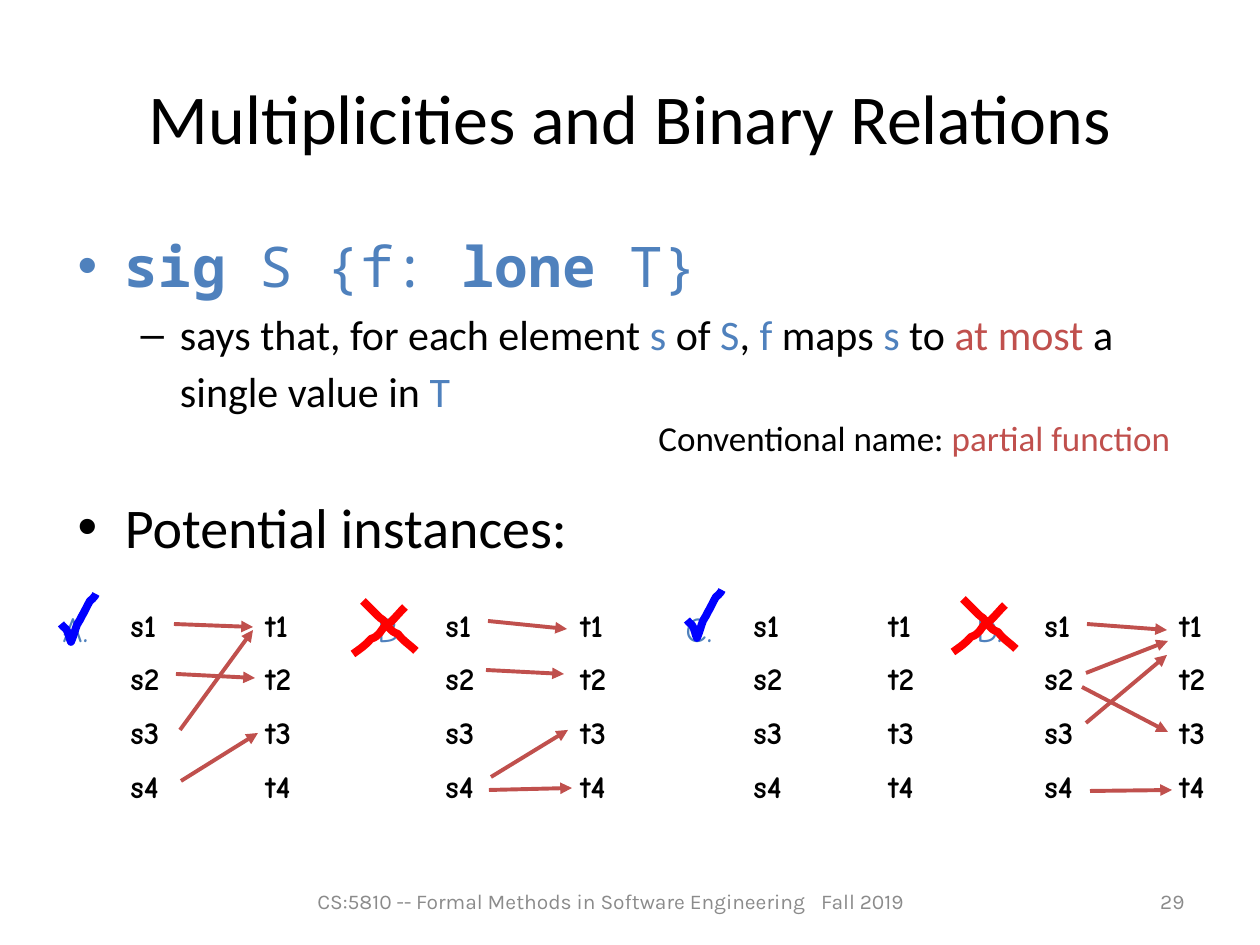
from lxml import etree
from pptx import Presentation
from pptx import util as u
from pptx.dml.color import RGBColor
from pptx.enum import shapes, text
from pptx.oxml.ns import qn

BLACK = RGBColor(0, 0, 0)
BLUE = RGBColor(0x4F, 0x81, 0xBD)
RED = RGBColor(0xC0, 0x50, 0x4D)
GREY = RGBColor(0x8B, 0x8B, 0x8B)
TICK_BLUE = RGBColor(0, 0, 0xFF)
CROSS_RED = RGBColor(0xFF, 0, 0)

TITLE = "Multiplicities and Binary Relations"
SIGNATURE = [("sig", True), (" S {f: ", False), ("lone", True), (" T}", False)]
MEANING = [
    ("says that, for each element ", BLACK), ("s", BLUE), (" of ", BLACK),
    ("S", BLUE), (", ", BLACK), ("f", BLUE), (" maps ", BLACK), ("s", BLUE),
    (" to ", BLACK), ("at most ", RED), ("a single value in ", BLACK),
    ("T", BLUE), (" ", BLACK),
]
INSTANCES = "Potential instances:"
CONVENTION = [("Conventional name: ", BLACK), ("partial function", RED)]
FOOTER = [("CS:5810 -- Formal Methods in Software Engineering", GREY),
          (" ", GREY), ("Fall 2019", GREY)]
PAGE_NUMBER = [("29", GREY)]

DIAGRAMS = [
    ("C.", 741, []),
    ("A.", 118, [(176, 674, 255, 678), (180, 730, 253, 630),
                 (181, 781, 258, 733), (174, 624, 253, 627)]),
    ("B.", 433, [(486, 670, 564, 674), (488, 621, 567, 629),
                 (491, 777, 568, 730), (489, 790, 572, 788)]),
    ("D.", 1032, [(1086, 673, 1168, 641), (1087, 624, 1167, 630),
                  (1082, 687, 1168, 732), (1090, 791, 1172, 790),
                  (1086, 723, 1167, 655)]),
]
ROWS = 4
ROW_TOP, ROW_SPAN = 600, 161
TARGET_SHIFT, LETTER_SHIFT = 135, -68

FALLING = [(0, 0), (5, 5), (10, 10), (15, 15), (16, 16), (18, 18), (20, 19),
           (26, 25), (26, 30), (35, 33), (40, 40), (47, 44), (53, 50)]
RISING = [(42, 6), (37, 11), (33, 16), (28, 21), (27, 22), (24, 22), (23, 24),
          (17, 30), (17, 35), (8, 38), (3, 44), (-3, 48), (-10, 53)]
TICK = [(0, 0), (1, 1), (3, 4), (5, 5), (8, 9), (8, 14), (10, 18), (13, 11),
        (14, 6), (16, 1), (18, -3), (20, -5), (21, -8), (24, -13), (26, -18),
        (29, -23), (30, -24), (33, -26), (34, -28), (34, -29), (34, -29),
        (35, -30)]
CROSSES = [(363, 601), (963, 599)]
TICKS = [(61, 624), (687, 620)]


def px(count):
    return round(count * 914400 / 126)


def place(shape, left, top, width, height):
    shape.left, shape.top = px(left), px(top)
    shape.width, shape.height = px(width), px(height)


def style(span, font, size, colour, bold=False):
    span.font.name = font
    span.font.size = u.Pt(size)
    span.font.color.rgb = colour
    span.font.bold = bold


def add_spans(para, pieces, font, size, bold=False):
    for words, colour in pieces:
        span = para.add_run()
        span.text = words
        style(span, font, size, colour, bold)


def add_label(parent, area, pieces, font, size, bold=False, align=None, wrap=False):
    box = parent.shapes.add_textbox(*map(px, area))
    frame = box.text_frame
    frame.word_wrap = wrap
    if wrap:
        frame.vertical_anchor = text.MSO_ANCHOR.MIDDLE
    para = frame.paragraphs[0]
    para.alignment = align
    add_spans(para, pieces, font, size, bold)
    return para


def add_arrow(parent, ends):
    arrow = parent.shapes.add_connector(shapes.MSO_CONNECTOR.STRAIGHT, *map(px, ends))
    arrow.line.color.rgb = RED
    arrow.line.width = u.Pt(2.25)
    etree.SubElement(arrow.line._get_or_add_ln(), qn("a:tailEnd"), type="triangle")
    etree.SubElement(arrow._element.spPr, qn("a:effectLst"))


def bend(stroke):
    segments = list(stroke._element.iter(qn("a:lnTo")))
    for first in range(0, len(segments), 3):
        curve = etree.Element(qn("a:cubicBezTo"))
        segments[first].addprevious(curve)
        for segment in segments[first:first + 3]:
            curve.append(segment[0])
            segment.getparent().remove(segment)


def add_stroke(parent, origin, points, colour):
    corners = [(px(origin[0] + x), px(origin[1] + y)) for x, y in points]
    builder = parent.shapes.build_freeform(*corners[0])
    builder.add_line_segments(corners[1:], close=False)
    stroke = builder.convert_to_shape()
    bend(stroke)
    stroke.shadow.inherit = False
    stroke.fill.background()
    stroke.line.color.rgb = colour
    stroke.line.width = u.Pt(4.5)


def fill_body(body):
    place(body, 65, 225, 1131, 330)
    frame = body.text_frame
    frame.auto_size = text.MSO_AUTO_SIZE.NONE
    signature = frame.paragraphs[0]
    for words, bold in SIGNATURE:
        add_spans(signature, [(words, BLUE)], "Noto Sans Mono", 32, bold)
    bullet = etree.SubElement(signature._p.get_or_add_pPr(), qn("a:buClr"))
    etree.SubElement(bullet, qn("a:srgbClr"), val=str(BLUE))
    meaning = frame.add_paragraph()
    meaning.level = 1
    add_spans(meaning, MEANING, "Calibri", 24)
    meaning.runs[-1].font.size = u.Pt(28)
    instances = frame.add_paragraph()
    instances.space_before = u.Pt(43)
    add_spans(instances, [(INSTANCES, BLACK)], "Calibri", 32)


def add_diagram(page, letter, left, arrows):
    group = page.shapes.add_group_shape()
    for name, shift in (("s", 0), ("t", TARGET_SHIFT)):
        for row in range(ROWS):
            top = ROW_TOP + ROW_SPAN * row // (ROWS - 1)
            add_label(group, (left + shift, top, 59, 50),
                      [(f"{name}{row + 1}", BLACK)], "Comic Neue", 18, True)
    add_label(group, (left + LETTER_SHIFT, ROW_TOP + 1, 59, 54),
              [(letter, BLUE)], "Comic Neue", 20)
    for ends in arrows:
        add_arrow(group, ends)


def main():
    deck = Presentation()
    deck.slide_width, deck.slide_height = px(1260), px(945)
    page = deck.slides.add_slide(deck.slide_layouts[1])
    title, body = page.placeholders
    place(title, 63, 38, 1134, 158)
    title.text_frame.text = TITLE
    style(title.text_frame.paragraphs[0].runs[0], "Calibri", 40, BLACK)
    fill_body(body)
    add_label(page, (995, 876, 202, 50), PAGE_NUMBER, "Karla", 12,
              align=text.PP_ALIGN.RIGHT, wrap=True)
    for diagram in DIAGRAMS:
        add_diagram(page, *diagram)
    for origin in CROSSES:
        cross = page.shapes.add_group_shape()
        for points in (FALLING, RISING):
            add_stroke(cross, origin, points, CROSS_RED)
    for origin in TICKS:
        add_stroke(page, origin, TICK, TICK_BLUE)
    add_label(page, (646, 410, 537, 54), CONVENTION, "Calibri", 20)
    footer = add_label(page, (277, 876, 667, 50), FOOTER, "Karla", 12,
                       align=text.PP_ALIGN.CENTER, wrap=True)
    footer.runs[1].font._element.set("spc", "600")
    deck.save("out.pptx")


if __name__ == "__main__":
    main()
